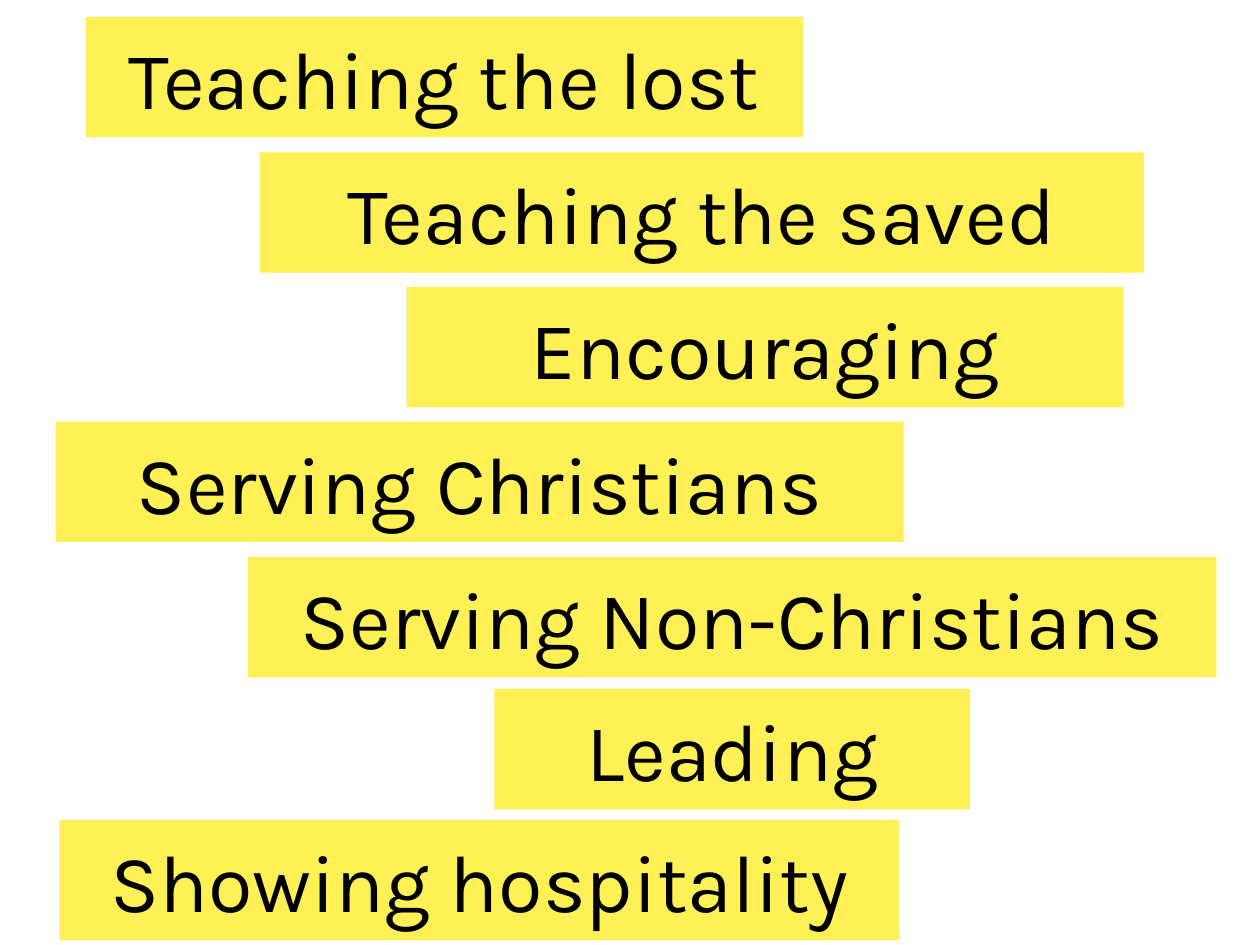
from pptx import Presentation
from pptx.dml.color import RGBColor
from pptx.enum.shapes import MSO_SHAPE as Preset
from pptx.enum.text import MSO_ANCHOR as Anchor, MSO_AUTO_SIZE as AutoSize, PP_ALIGN as Align
from pptx.util import Pt

EMU_PER_PX = 9144
SLIDE_WIDTH, SLIDE_HEIGHT = 1422, 1067
BANNER_HEIGHT = 136
INSET = 6
YELLOW, BLACK = "FFF056", "000000"

BANNERS = [
    ("Teaching the lost", 97, 19, 809),
    ("Teaching the saved", 293, 172, 998),
    ("Encouraging", 459, 324, 809),
    ("Serving Christians", 63, 476, 957),
    ("Serving Non-Christians", 280, 629, 1093),
    ("Leading", 558, 778, 537),
    ("Showing hospitality", 67, 926, 948),
]


def px(length):
    return length * EMU_PER_PX


def color(hex_value):
    return RGBColor.from_string(hex_value)


def apply_format(target, values):
    for name, value in values.items():
        setattr(target, name, value)


FRAME_FORMAT = {
    "margin_left": px(INSET),
    "margin_top": px(INSET),
    "margin_right": px(INSET),
    "margin_bottom": px(INSET),
    "vertical_anchor": Anchor.MIDDLE,
    "word_wrap": True,
    "auto_size": AutoSize.SHAPE_TO_FIT_TEXT,
}
FONT_FORMAT = {"name": "Karla", "size": Pt(66)}


def add_banner(page, text, left, top, width):
    box = page.shapes.add_shape(
        Preset.RECTANGLE, px(left), px(top), px(width), px(BANNER_HEIGHT)
    )
    box.shadow.inherit = False
    box.fill.solid()
    box.fill.fore_color.rgb = color(YELLOW)
    box.line.fill.background()
    apply_format(box.text_frame, FRAME_FORMAT)
    para = box.text_frame.paragraphs[0]
    para.alignment = Align.CENTER
    span = para.add_run()
    span.text = text
    apply_format(span.font, FONT_FORMAT)
    span.font.color.rgb = color(BLACK)


def main():
    deck = Presentation()
    apply_format(deck, {"slide_width": px(SLIDE_WIDTH), "slide_height": px(SLIDE_HEIGHT)})
    page = deck.slides.add_slide(deck.slide_layouts.get_by_name("Blank"))
    for banner in BANNERS:
        add_banner(page, *banner)
    deck.save("out.pptx")


if __name__ == "__main__":
    main()
